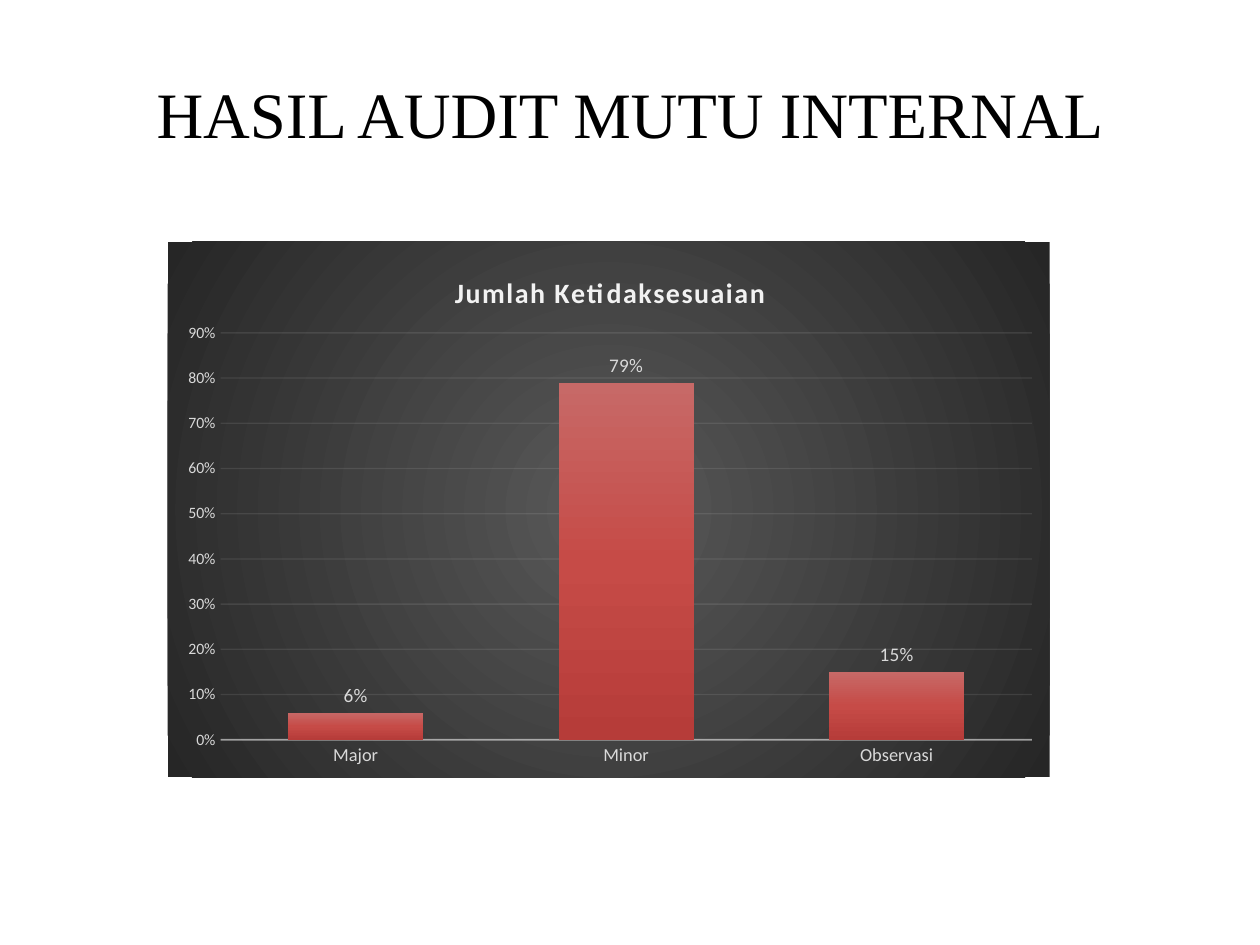
from pptx import Presentation
from pptx.chart.data import CategoryChartData
from pptx.dml.color import RGBColor
from pptx.enum.chart import XL_CHART_TYPE, XL_LABEL_POSITION, XL_TICK_MARK
from pptx.enum.text import MSO_ANCHOR, PP_ALIGN
from pptx.oxml import parse_xml
from pptx.oxml.ns import nsdecls
from pptx.util import Inches, Pt


def ink(color):
    return RGBColor.from_string(color)


def write(frame, text, size, color, face, bold=False):
    para = frame.paragraphs[0]
    para.alignment = PP_ALIGN.CENTER
    run = para.add_run()
    run.text = text
    font = run.font
    font.size, font.name, font.bold = Pt(size), face, bold
    font.color.rgb = ink(color)
    return run


deck = Presentation()
deck.slide_width, deck.slide_height = Inches(10), Inches(7.5)
slide = deck.slides.add_slide(deck.slide_layouts[6])

# Heading
box = slide.shapes.add_textbox(Inches(0.5), Inches(0.5), Inches(9), Inches(0.78))
frame = box.text_frame
frame.word_wrap = True
frame.vertical_anchor = MSO_ANCHOR.MIDDLE
write(frame, "HASIL AUDIT MUTU INTERNAL", 37, "000000", "Times New Roman")

# Column chart
data = CategoryChartData(number_format="0%")
data.categories = ["Major", "Minor", "Observasi"]
data.add_series("Series 1", [0.06, 0.79, 0.15])
chart = slide.shapes.add_chart(
    XL_CHART_TYPE.COLUMN_CLUSTERED,
    Inches(1.33), Inches(1.92), Inches(7), Inches(4.25), data,
).chart
chart.has_legend = False
chart.font.size, chart.font.name = Pt(10), "Calibri"

title = chart.chart_title
run = write(title.text_frame, "Jumlah Ketidaksesuaian", 16, "F2F2F2", "Calibri", bold=True)
run.font._element.set("spc", "100")
title.include_in_layout = False

plot = chart.plots[0]
plot.gap_width, plot.overlap = 100, -24
plot.vary_by_categories = False
plot.has_data_labels = True
labels = plot.data_labels
labels.show_value = True
labels.position = XL_LABEL_POSITION.OUTSIDE_END
labels.number_format, labels.number_format_is_linked = "0%", False

# Axes
cat, val = chart.category_axis, chart.value_axis
for axis in (cat, val):
    axis.major_tick_mark = axis.minor_tick_mark = XL_TICK_MARK.NONE
val.minimum_scale, val.maximum_scale, val.major_unit = 0, 0.9, 0.1
val.tick_labels.number_format = "0%"
val.tick_labels.number_format_is_linked = False
val.format.line.fill.background()

for part, size in ((cat.tick_labels, 10.5), (val.tick_labels, 9), (labels, 11)):
    part.font.size, part.font.name = Pt(size), "Calibri"
    part.font.color.rgb = ink("D9D9D9")

grid = val.major_gridlines
for line, width in ((cat.format.line, 1), (grid.format.line, 0.75)):
    line.width = Pt(width)
    line.color.rgb = ink("F2F2F2")
for axis, query, alpha in (
    (cat, "./c:spPr//a:srgbClr", 54),
    (val, "./c:majorGridlines//a:srgbClr", 10),
):
    tone = axis._element.xpath(query)[0]
    tone.append(parse_xml(f'<a:alpha {nsdecls("a")} val="{alpha * 1000}"/>'))

# Gradients of the chart area and the columns
space = chart._chartSpace
area = parse_xml(f'<c:spPr {nsdecls("c", "a")}><a:ln><a:noFill/></a:ln></c:spPr>')
space.xpath("./c:txPr")[0].addprevious(area)
bars = plot.series[0]
bars.invert_if_negative = False
bars.format.line.fill.background()
circle = '<a:path path="circle"><a:fillToRect l="50000" t="50000" r="50000" b="50000"/></a:path>'
down = '<a:lin ang="5400000" scaled="0"/>'
for target, stops, shade in (
    (area, {0: "595959", 100: "262626"}, circle),
    (bars._element.spPr, {0: "C76967", 50: "C64B47", 100: "B63C39"}, down),
):
    marks = "".join(
        f'<a:gs pos="{pos * 1000}"><a:srgbClr val="{ink(color)}"/></a:gs>'
        for pos, color in stops.items()
    )
    target.insert(0, parse_xml(
        f'<a:gradFill {nsdecls("a")}><a:gsLst>{marks}</a:gsLst>{shade}</a:gradFill>'
    ))

# Places of the title and the plot, as shares of the chart
for parent, inner, spots in (
    (title._element, "", {"x": 0.32, "y": 0.05}),
    (space.chart.plotArea, '<c:layoutTarget val="inner"/>',
     {"x": 0.06, "y": 0.17, "w": 0.92, "h": 0.76}),
):
    for old in parent.xpath("./c:layout"):
        parent.remove(old)
    modes = "".join(f'<c:{key}Mode val="edge"/>' for key in "xy")
    sizes = "".join(f'<c:{key} val="{num}"/>' for key, num in spots.items())
    layout = parse_xml(
        f'<c:layout {nsdecls("c")}><c:manualLayout>{inner}{modes}{sizes}'
        "</c:manualLayout></c:layout>"
    )
    text = parent.xpath("./c:tx")
    if text:
        text[0].addnext(layout)
    else:
        parent.insert(0, layout)

deck.save("out.pptx")
